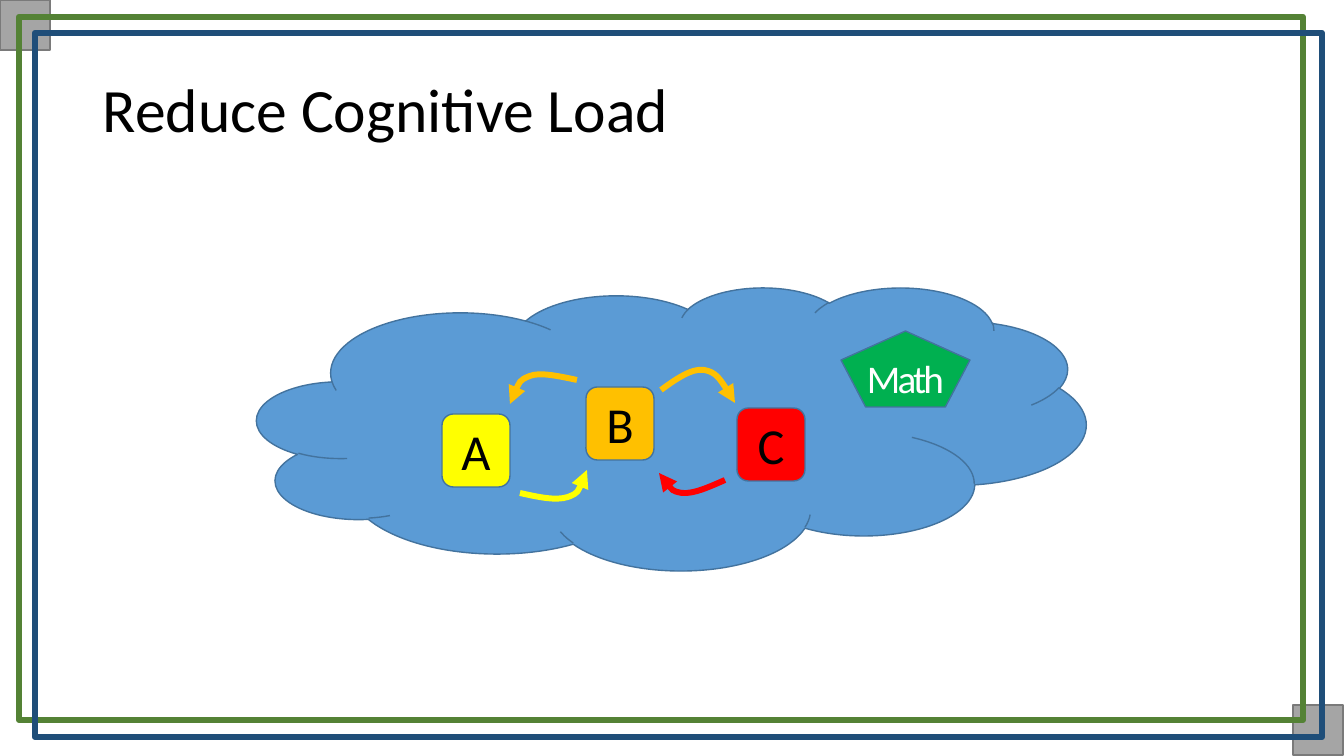
from lxml import etree
from pptx import Presentation
from pptx.dml.color import RGBColor
from pptx.enum.shapes import MSO_SHAPE as Shape
from pptx.enum.text import MSO_ANCHOR as Anchor, PP_ALIGN as Align
from pptx.oxml.ns import qn
from pptx.util import Emu, Pt

PX = 914400 / 100.8
BLACK, WHITE, EDGE = "000000", "FFFFFF", "43739E"
YELLOW, ORANGE, RED = "FFFF00", "FFC000", "FF0000"

# Letter, left, top, fill
CARDS = [("A", 442, 414, YELLOW), ("B", 586, 387, ORANGE), ("C", 737, 408, RED)]

# Colour, start point, then two Bezier segments of three points each
ARROWS = [
    (YELLOW, [(520, 493), (538, 497), (556, 501), (568, 497),
              (579, 493), (583, 482), (587, 470)]),
    (ORANGE, [(577, 380), (558, 376), (540, 372), (530, 376),
              (519, 380), (514, 392), (510, 404)]),
    (ORANGE, [(661, 390), (676, 379), (692, 368), (704, 370),
              (716, 372), (726, 387), (735, 403)]),
    (RED, [(725, 480), (709, 487), (694, 494), (682, 493),
           (671, 491), (665, 482), (659, 473)]),
]


def px(*lengths):
    return [Emu(round(length * PX)) for length in lengths]


def paint(color_format, color):
    color_format.rgb = RGBColor.from_string(color)


def assign(target, values):
    for name, value in values.items():
        setattr(target, name, value)


def style(shape, fill, line, width):
    shape.shadow.inherit = False
    if fill:
        shape.fill.solid()
        paint(shape.fill.fore_color, fill)
    else:
        shape.fill.background()
    paint(shape.line.color, line)
    shape.line.width = Pt(width)


def add_box(page, kind, place, fill, line, width=1):
    box = page.shapes.add_shape(kind, *px(*place))
    style(box, fill, line, width)
    return box


def write(box, text, size, color, para_format, spacing=0, **frame_format):
    frame = box.text_frame
    assign(frame, {"word_wrap": True, "vertical_anchor": Anchor.MIDDLE} | frame_format)
    para = frame.paragraphs[0]
    assign(para, para_format)
    span = para.add_run()
    span.text = text
    assign(span.font, {"name": "Calibri", "size": Pt(size)})
    paint(span.font.color, color)
    if spacing:
        span.font._element.set("spc", str(spacing * 100))


def add_curved_arrow(page, color, points):
    builder = page.shapes.build_freeform(*points[0], scale=PX)
    builder.add_line_segments(points[1:], close=False)
    arrow = builder.convert_to_shape()
    style(arrow, None, color, 4.25)
    # Each three straight segments become one cubic curve
    steps = list(arrow._element.iter(qn("a:lnTo")))
    for first in range(0, len(steps), 3):
        curve = etree.Element(qn("a:cubicBezTo"))
        steps[first].addprevious(curve)
        for step in steps[first:first + 3]:
            curve.append(step[0])
            step.getparent().remove(step)
    etree.SubElement(arrow.line._get_or_add_ln(), qn("a:tailEnd"), type="triangle")


def main():
    deck = Presentation()
    deck.slide_width, deck.slide_height = px(1344, 756)
    page = deck.slides.add_slide(deck.slide_layouts[6])

    # Corner squares and the two frames
    for left, top in [(0, 0), (1293, 705)]:
        add_box(page, Shape.RECTANGLE, (left, top, 50, 50), "A5A5A5", "7A7A7A")
    for place, color in [((19, 17, 1284, 703), "548235"), ((35, 33, 1287, 704), "1F4E79")]:
        add_box(page, Shape.RECTANGLE, place, None, color, 4.5)

    # Cloud and title
    add_box(page, Shape.CLOUD, (257, 287, 829, 283), "5B9BD5", EDGE)
    title = page.shapes.add_textbox(*px(93, 40, 1159, 146))
    write(title, "Reduce Cognitive Load", 44, BLACK, {"line_spacing": 0.9})

    # Letter cards and the arrows between them
    for letter, left, top, fill in CARDS:
        card = add_box(page, Shape.ROUNDED_RECTANGLE, (left, top, 68, 73), fill, EDGE)
        write(card, letter, 36, BLACK, {"alignment": Align.CENTER})
    for color, points in ARROWS:
        add_curved_arrow(page, color, points)

    # Math badge
    badge = add_box(page, Shape.REGULAR_PENTAGON, (841, 331, 129, 76), "00B050", EDGE)
    write(badge, "Math", 28, WHITE, {"alignment": Align.CENTER}, spacing=-2,
          margin_left=0, margin_right=0, vertical_anchor=Anchor.TOP)

    deck.save("out.pptx")


if __name__ == "__main__":
    main()
